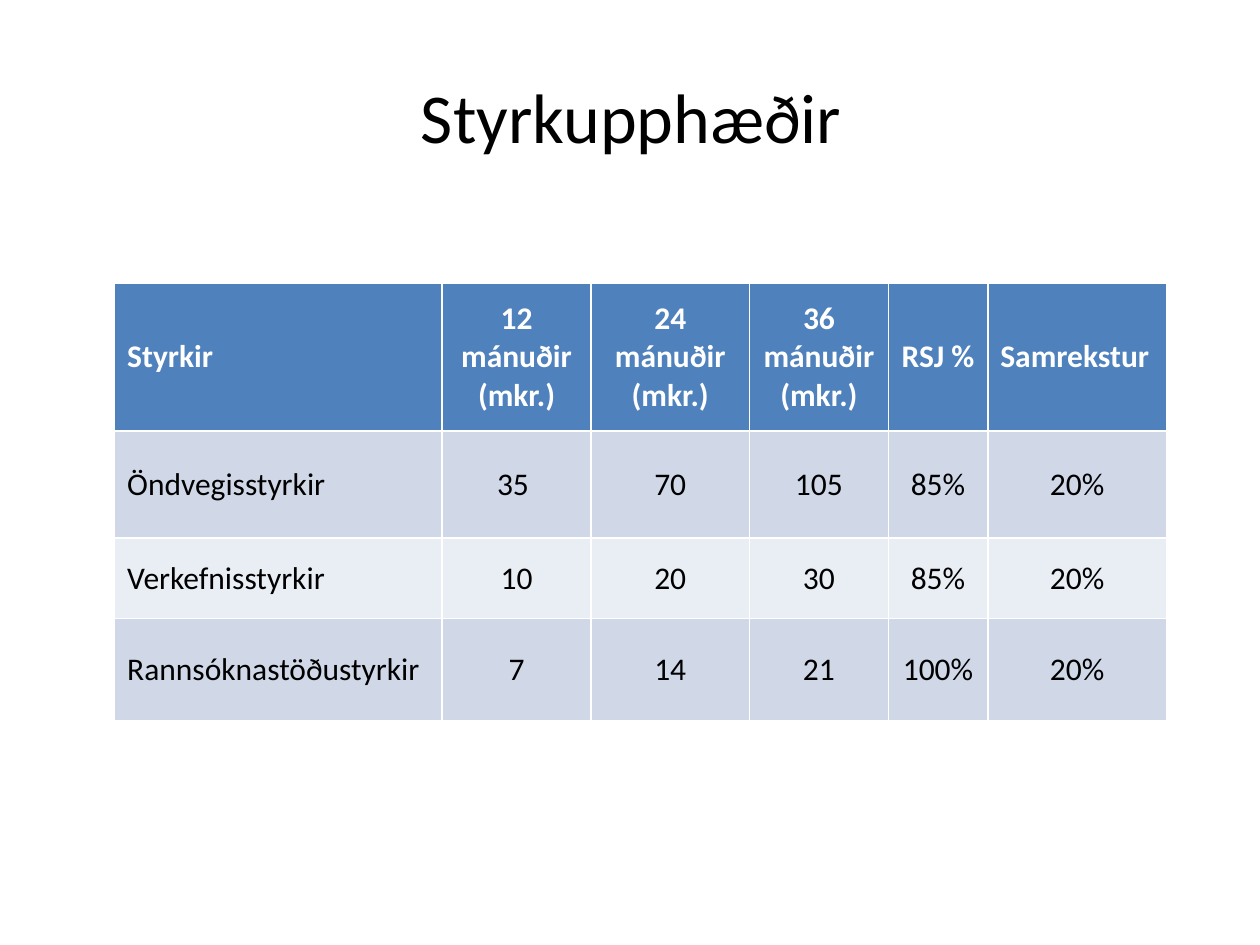
from dataclasses import dataclass

from pptx import Presentation
from pptx.dml.color import RGBColor
from pptx.enum.text import MSO_ANCHOR as Anchor, PP_ALIGN as Align
from pptx.util import Inches, Pt

BLACK = RGBColor(0x00, 0x00, 0x00)
WHITE = RGBColor(0xFF, 0xFF, 0xFF)
BLUE = RGBColor(0x4F, 0x81, 0xBD)
DARK = RGBColor(0xD0, 0xD8, 0xE8)
LIGHT = RGBColor(0xE9, 0xED, 0xF4)
FONT = "Calibri"


@dataclass
class Row:
    height: float
    fill: RGBColor
    texts: tuple[str, ...]
    color: RGBColor = BLACK
    bold: bool = False


WIDTHS = (2.6, 1.18, 1.26, 1.1, 0.79, 1.42)
ROWS = (
    Row(1.17, BLUE, ("Styrkir", "12 mánuðir\n(mkr.)", "24 mánuðir (mkr.)",
                     "36 mánuðir (mkr.)", "RSJ %", "Samrekstur"), WHITE, True),
    Row(0.85, DARK, ("Öndvegisstyrkir", "35 ", "70", "105", "85%", "20%")),
    Row(0.64, LIGHT, ("Verkefnisstyrkir", "10", "20", "30", "85%", "20%")),
    Row(0.81, DARK, ("Rannsóknastöðustyrkir", "7", "14", "21", "100%", "20%")),
)
LEFT = ("Styrkir", "Samrekstur")


def style(para, size: float, color: RGBColor, bold: bool, align) -> None:
    para.alignment = align
    font = para.font
    font.name = FONT
    font.size = Pt(size)
    font.bold = bold
    font.color.rgb = color


def add_title(slide, text: str) -> None:
    title = slide.shapes.title
    title.left, title.top = Inches(0.51), Inches(0.29)
    title.width, title.height = Inches(9), Inches(1.25)
    frame = title.text_frame
    frame.text = text
    frame.vertical_anchor = Anchor.MIDDLE
    style(frame.paragraphs[0], 40, BLACK, False, Align.CENTER)


def fill_cell(cell, text: str, row: Row, align) -> None:
    cell.text = text
    cell.vertical_anchor = Anchor.MIDDLE
    cell.fill.solid()
    cell.fill.fore_color.rgb = row.fill
    for para in cell.text_frame.paragraphs:
        style(para, 18, row.color, row.bold, align)


def add_grid(slide) -> None:
    height = sum(row.height for row in ROWS)
    table = slide.shapes.add_table(
        len(ROWS), len(WIDTHS), Inches(0.91), Inches(2.25),
        Inches(sum(WIDTHS)), Inches(height)).table
    for col, width in zip(table.columns, WIDTHS):
        col.width = Inches(width)
    for line, row in zip(table.rows, ROWS):
        line.height = Inches(row.height)
        for i, (cell, text) in enumerate(zip(line.cells, row.texts)):
            align = Align.LEFT if i == 0 or text in LEFT else Align.CENTER
            fill_cell(cell, text, row, align)


def main() -> None:
    deck = Presentation()
    deck.slide_width, deck.slide_height = Inches(10), Inches(7.5)
    slide = deck.slides.add_slide(deck.slide_layouts[5])
    add_title(slide, "Styrkupphæðir")
    add_grid(slide)
    deck.save("out.pptx")


if __name__ == "__main__":
    main()
